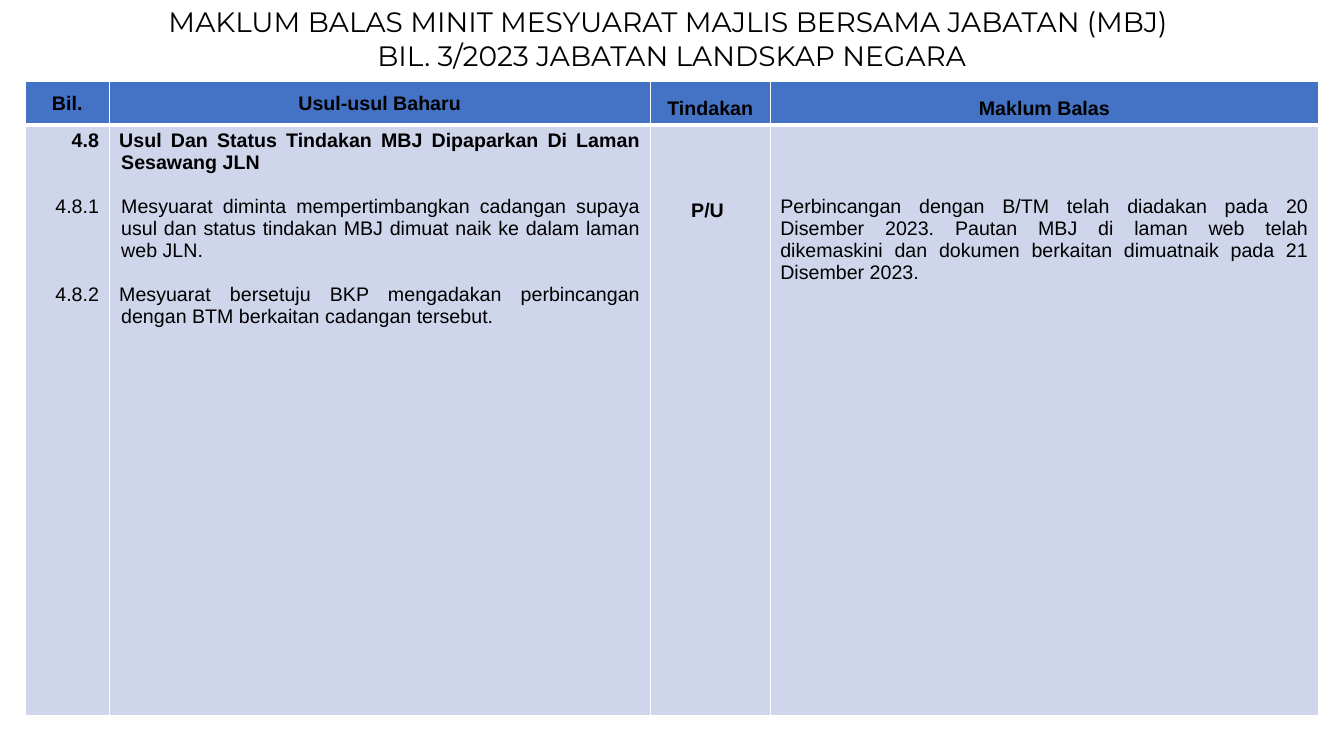
from dataclasses import dataclass

from lxml import etree
from pptx import Presentation
from pptx import util as u
from pptx.dml import color
from pptx.enum import text
from pptx.oxml import ns


@dataclass(frozen=True)
class Theme:
    ink: str = "000000"
    header: str = "4472C4"
    body: str = "CFD5EA"
    rule: str = "FFFFFF"
    title_font: str = "Montserrat"
    table_font: str = "Arial"
    title_size: float = 20
    table_size: float = 14
    line: float = 15.7  # height of one table text line, in points
    thin: float = 1
    thick: float = 3


THEME = Theme()
ALIGN = text.PP_ALIGN
CELL_TOP = 3.6  # usual top inset of a cell, in points

HEADINGS = [("Bil.", 1), ("Usul-usul Baharu", 1), ("Tindakan", 1.5), ("Maklum Balas", 1.5)]
COLUMNS = [2.11, 13.64, 3.02, 13.82]
ROWS = [1.09, 14.88]

# Each body column: alignment, lines skipped at the top, paragraphs
# Each paragraph: wording, bold, lines skipped above, hanging indent
BODY = [
    (ALIGN.RIGHT, 0, [
        ("4.8", True, 0, None),
        ("4.8.1", False, 2, None),
        ("4.8.2", False, 3, None),
    ]),
    (ALIGN.JUSTIFY, 0, [
        ("Usul Dan Status Tindakan MBJ Dipaparkan Di Laman Sesawang JLN", True, 0, 0.05),
        ("Mesyuarat diminta mempertimbangkan cadangan supaya usul dan status "
         "tindakan MBJ dimuat naik ke dalam laman web JLN.", False, 1, 0),
        ("Mesyuarat bersetuju BKP mengadakan perbincangan dengan BTM berkaitan "
         "cadangan tersebut.", False, 1, 0.05),
    ]),
    (ALIGN.CENTER, 3.15, [("P/U ", True, 0, None)]),
    (ALIGN.JUSTIFY, 3, [
        ("Perbincangan dengan B/TM telah diadakan pada 20 Disember 2023. Pautan MBJ "
         "di laman web telah dikemaskini dan dokumen berkaitan dimuatnaik pada "
         "21 Disember 2023.", False, 0, None),
    ]),
]


def write(frame, wording, first=False, font=THEME.table_font, size=THEME.table_size,
          bold=False, align=ALIGN.CENTER, spacing=None, above=0, hanging=None):
    """Add one formatted paragraph to a text frame."""
    para = frame.paragraphs[0] if first else frame.add_paragraph()
    para.alignment = align
    if spacing:
        para.line_spacing = spacing
    if above:
        para.space_before = u.Pt(above)
    if hanging is not None:
        properties = para._p.get_or_add_pPr()
        properties.set("marL", str(u.Cm(0.05)))
        properties.set("indent", str(-u.Cm(hanging)))
    span = para.add_run()
    span.text = wording
    span.font.name, span.font.size, span.font.bold = font, u.Pt(size), bold
    span.font.color.rgb = color.RGBColor.from_string(THEME.ink)


def style_cell(cell, fill, bottom=THEME.thin):
    """Give a cell its borders and fill."""
    properties = cell._tc.get_or_add_tcPr()
    widths = {"lnL": THEME.thin, "lnR": THEME.thin, "lnT": THEME.thin, "lnB": bottom}
    for side, width in widths.items():
        line = etree.SubElement(properties, ns.qn("a:" + side), w=str(u.Pt(width)))
        solid = etree.SubElement(line, ns.qn("a:solidFill"))
        etree.SubElement(solid, ns.qn("a:srgbClr"), val=THEME.rule)
    cell.fill.solid()
    cell.fill.fore_color.rgb = color.RGBColor.from_string(fill)


def add_title(page, left, top, width, height):
    box = page.shapes.add_textbox(u.Cm(left), u.Cm(top), u.Cm(width), u.Cm(height))
    frame = box.text_frame
    frame.word_wrap = True
    frame.auto_size = text.MSO_AUTO_SIZE.SHAPE_TO_FIT_TEXT
    lines = ["MAKLUM BALAS MINIT MESYUARAT MAJLIS BERSAMA JABATAN (MBJ) ",
             "BIL. 3/2023 JABATAN LANDSKAP NEGARA"]
    for index, wording in enumerate(lines):
        write(frame, wording, first=index == 0, font=THEME.title_font, size=THEME.title_size)


def add_minutes(page, left, top):
    holder = page.shapes.add_table(len(ROWS), len(COLUMNS), u.Cm(left), u.Cm(top),
                                   u.Cm(sum(COLUMNS)), u.Cm(sum(ROWS)))
    table = holder.table
    for column, width in zip(table.columns, COLUMNS):
        column.width = u.Cm(width)
    for row, height in zip(table.rows, ROWS):
        row.height = u.Cm(height)

    # Header row
    for index, (wording, spacing) in enumerate(HEADINGS):
        cell = table.cell(0, index)
        style_cell(cell, THEME.header, bottom=THEME.thick)
        cell.vertical_anchor = text.MSO_ANCHOR.MIDDLE
        write(cell.text_frame, wording, first=True, bold=True, spacing=spacing)

    # Body row
    for index, (align, skipped, paragraphs) in enumerate(BODY):
        cell = table.cell(1, index)
        style_cell(cell, THEME.body)
        cell.margin_top = u.Pt(CELL_TOP + skipped * THEME.line)
        for number, (wording, bold, above, hanging) in enumerate(paragraphs):
            write(cell.text_frame, wording, first=number == 0, bold=bold, align=align,
                  above=above * THEME.line, hanging=hanging)


def main():
    deck = Presentation()
    deck.slide_width, deck.slide_height = u.Cm(33.87), u.Cm(19.05)
    page = deck.slides.add_slide(deck.slide_layouts[6])
    add_minutes(page, 0.64, 2.06)
    add_title(page, 1.73, 0, 30.4, 1.96)
    deck.save("out.pptx")


if __name__ == "__main__":
    main()
